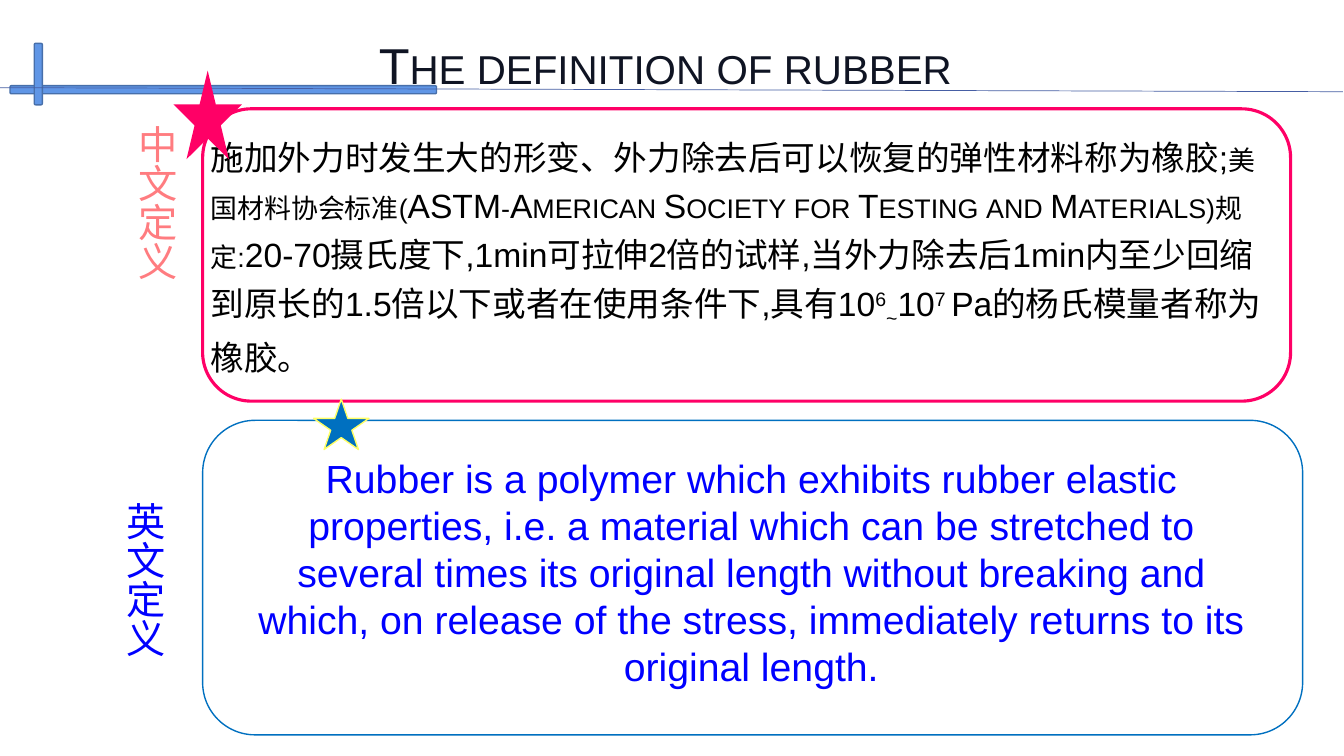
from dataclasses import dataclass

from lxml import etree
from pptx import Presentation
from pptx import util as u
from pptx.dml.color import RGBColor
from pptx.enum import shapes, text
from pptx.oxml.ns import qn


@dataclass(frozen=True)
class Theme:
    font: str = "Arial"
    title_size: int = 36
    chinese_size: int = 24
    body_size: int = 28
    title: str = "0F1423"
    black: str = "000000"
    bar_fill: str = "6096E6"
    bar_line: str = "476FAA"
    rule: str = "465EA4"
    pink: str = "FF0066"
    salmon: str = "FF7C80"
    blue: str = "0070C0"
    bright_blue: str = "0000FF"
    yellow: str = "FFFF66"


THEME = Theme()
SHAPE = shapes.MSO_SHAPE
ALIGN = text.PP_ALIGN

TITLE = "The definition of rubber"
SMALL_CAPS = {"cap": "small"}
SUPERSCRIPT = {"baseline": "30000"}
SUBSCRIPT = {"baseline": "-25000"}
CHINESE_RUNS = [
    ("施加外力时发生大的形变、外力除去后可以恢复的弹性材料称为橡胶;", {}),
    ("美国材料协会标准(ASTM-American Society for Testing and Materials)规定:", SMALL_CAPS),
    ("20-70摄氏度下,1min可拉伸2倍的试样,当外力除去后1min内至少回缩到原长的1.5倍以下"
     "或者在使用条件下,具有10", {}),
    ("6", SUPERSCRIPT),
    ("~", SUBSCRIPT),
    ("10", {}),
    ("7 ", SUPERSCRIPT),
    ("Pa的杨氏模量者称为橡胶。", {}),
]
ENGLISH_RUNS = [(
    "Rubber is a polymer which exhibits rubber elastic properties, i.e. a material "
    "which can be stretched to several times its original length without breaking and "
    "which, on release of the stress, immediately returns to its original length.", {})]


def inches(*lengths):
    return [u.Inches(length) for length in lengths]


def add_shape(slide, kind, box, fill=None, line=None, width=1):
    shape = slide.shapes.add_shape(kind, *inches(*box))
    shape.shadow.inherit = False
    if fill:
        shape.fill.solid()
        shape.fill.fore_color.rgb = RGBColor.from_string(fill)
    else:
        shape.fill.background()
    if line:
        shape.line.color.rgb = RGBColor.from_string(line)
        shape.line.width = u.Pt(width)
    else:
        shape.line.fill.background()
    return shape


def add_text(slide, box, runs, size, color, align=ALIGN.LEFT, line_spacing=None,
             anchor=text.MSO_ANCHOR.TOP, vertical=False):
    """Add one paragraph; each run is its wording and its extra run attributes."""
    frame = slide.shapes.add_textbox(*inches(*box)).text_frame
    frame.word_wrap = True
    frame.vertical_anchor = anchor
    if vertical:
        frame._txBody.bodyPr.set("vert", "eaVert")
    paragraph = frame.paragraphs[0]
    paragraph.alignment = align
    if line_spacing:
        paragraph.line_spacing = line_spacing
    paragraph.font.name = THEME.font
    paragraph.font.size = u.Pt(size)
    paragraph.font.color.rgb = RGBColor.from_string(color)
    for wording, attributes in runs:
        run = paragraph.add_run()
        run.text = wording
        for name, value in attributes.items():
            run.font._element.set(name, value)


def add_header(slide, left, top):
    for bar in ((left, top + 0.42, 4.23, 0.08), (left + 0.24, top, 0.08, 0.61)):
        add_shape(slide, SHAPE.ROUNDED_RECTANGLE, bar, THEME.bar_fill, THEME.bar_line)
    rule = slide.shapes.add_connector(
        shapes.MSO_CONNECTOR.STRAIGHT, *inches(0, top + 0.44, 13.32, top + 0.48))
    rule.line.color.rgb = RGBColor.from_string(THEME.rule)
    rule.line.width = u.Pt(0.5)
    etree.SubElement(rule._element.spPr, qn("a:effectLst"))
    add_text(slide, (left + 3.56, top - 0.22, 6.5, 0.78), [(TITLE, SMALL_CAPS)],
             THEME.title_size, THEME.title, anchor=text.MSO_ANCHOR.BOTTOM)


def add_label(slide, box, wording, color):
    add_text(slide, box, [(wording, {})], THEME.body_size, color, vertical=True)


def add_chinese_definition(slide, left, top, width, height):
    add_text(slide, (left - 0.02, top + 0.15, width + 0.03, height + 0.33), CHINESE_RUNS,
             THEME.chinese_size, THEME.black, line_spacing=1.2)
    add_label(slide, (left - 0.84, top + 0.06, 0.67, 2.84), "中文定义", THEME.salmon)
    add_shape(slide, SHAPE.STAR_5_POINT, (left - 0.29, top - 0.38, 0.68, 0.88), THEME.pink)
    add_shape(slide, SHAPE.ROUNDED_RECTANGLE, (left, top, width, height),
              line=THEME.pink, width=2.25)


def add_english_definition(slide, left, top, width, height):
    add_text(slide, (left + 0.3, top + 0.29, width - 0.63, height - 0.67), ENGLISH_RUNS,
             THEME.body_size, THEME.bright_blue, align=ALIGN.CENTER)
    add_shape(slide, SHAPE.ROUNDED_RECTANGLE, (left, top, width, height), line=THEME.blue)
    add_shape(slide, SHAPE.STAR_5_POINT, (left + 1.1, top - 0.21, 0.55, 0.5),
              THEME.blue, THEME.yellow)
    add_label(slide, (left - 0.96, top + 0.71, 0.67, 1.89), "英文定义", THEME.bright_blue)


def main():
    presentation = Presentation()
    presentation.slide_width, presentation.slide_height = inches(13.33, 7.5)
    slide = presentation.slides.add_slide(presentation.slide_layouts[6])
    add_header(slide, 0.1, 0.43)
    add_chinese_definition(slide, 2.01, 1.08, 10.79, 2.9)
    add_english_definition(slide, 2.01, 4.17, 10.91, 3.12)
    presentation.save("out.pptx")


if __name__ == "__main__":
    main()
